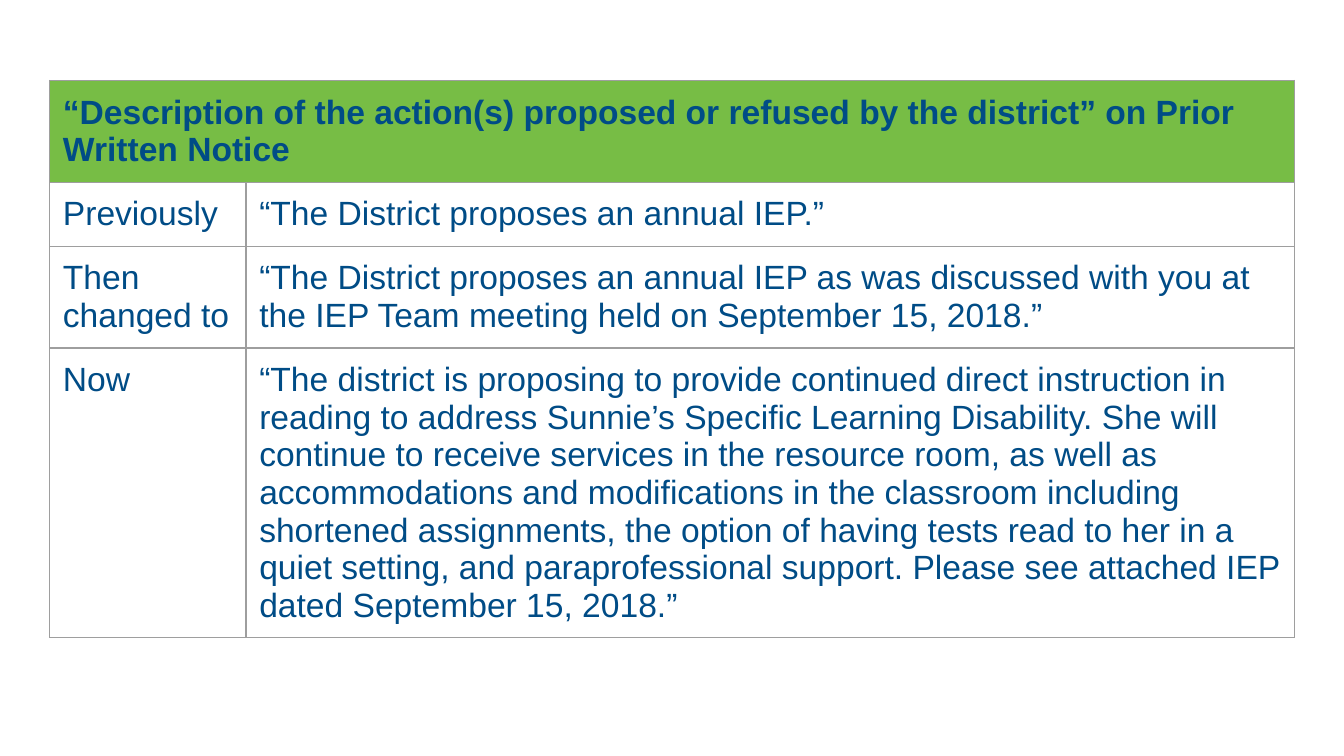
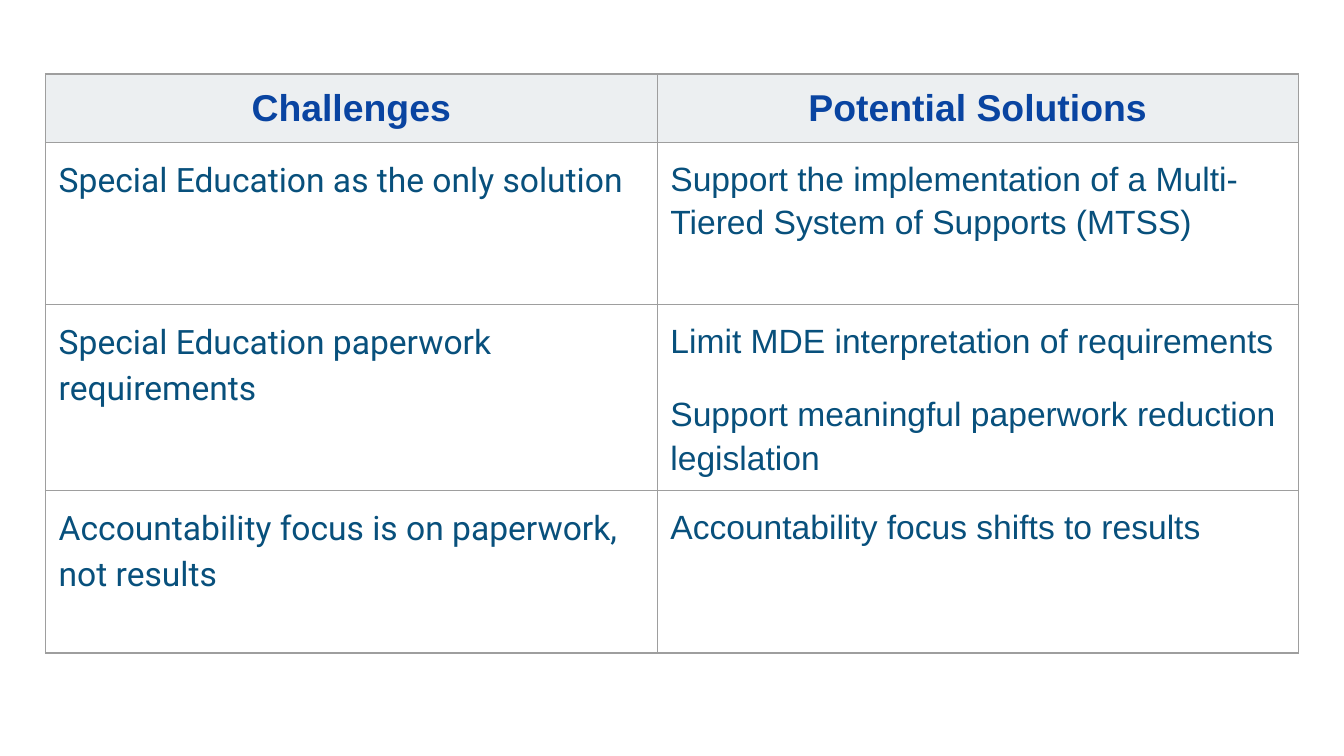
"""Build two slides that each hold one bordered table."""
import dataclasses

import lxml.etree
import pptx
import pptx.dml.color
import pptx.enum.text
import pptx.oxml.ns
import pptx.presentation
import pptx.table
import pptx.util

Cm = pptx.util.Cm
Pt = pptx.util.Pt
qn = pptx.oxml.ns.qn

NAVY, BLUE, TEAL = "004C86", "0944A1", "08507C"
GREEN, PALE, GREY = "77BD45", "ECEFF1", "9E9E9E"
BORDER = Pt(0.75)
INSET = Cm(0.25)


@dataclasses.dataclass(frozen=True)
class TextStyle:
    """Look of the text in a cell."""
    color: str
    size: float = 18
    font: str = "Arial"
    bold: bool = False
    centred: bool = False
    line_spacing: float | None = None
    gap: float | None = None


@dataclasses.dataclass(frozen=True)
class CellData:
    """Paragraphs of one cell with their style and fill."""
    paragraphs: tuple[str, ...]
    style: TextStyle
    fill: str | None = None


@dataclasses.dataclass(frozen=True)
class TableData:
    """Place, grid and cells of one table, in centimetres."""
    left: float
    top: float
    widths: tuple[float, ...]
    heights: tuple[float, ...]
    rows: tuple[tuple[CellData, ...], ...]


NOTICE_HEAD = TextStyle(NAVY, bold=True)
NOTICE_BODY = TextStyle(NAVY)
COLUMN_HEAD = TextStyle(BLUE, size=20, bold=True, centred=True)
SOLUTION = TextStyle(TEAL, line_spacing=1.15, gap=16)
CHALLENGE = dataclasses.replace(SOLUTION, font="Roboto")


def notice_row(label: str, wording: str) -> tuple[CellData, ...]:
    """Return a row of the notice table."""
    return tuple(CellData((text,), NOTICE_BODY) for text in (label, wording))


def challenge_row(challenge: str, *solutions: str) -> tuple[CellData, ...]:
    """Return a row pairing a challenge with its solutions."""
    return CellData((challenge,), CHALLENGE), CellData(solutions, SOLUTION)


NOTICE = TableData(
    0.94, 1.52, (3.71, 19.81), (1.07, 1.09, 1.07, 1.07),
    (
        (CellData(("“Description of the action(s) proposed or refused by the "
                   "district” on Prior Written Notice",), NOTICE_HEAD, GREEN),),
        notice_row("Previously", "“The District proposes an annual IEP.”"),
        notice_row("Then changed to",
                   "“The District proposes an annual IEP as was discussed with "
                   "you at the IEP Team meeting held on September 15, 2018.”"),
        notice_row("Now",
                   "“The district is proposing to provide continued direct "
                   "instruction in reading to address Sunnie’s Specific Learning "
                   "Disability. She will continue to receive services in the "
                   "resource room, as well as accommodations and modifications "
                   "in the classroom including shortened assignments, the option "
                   "of having tests read to her in a quiet setting, and "
                   "paraprofessional support. Please see attached IEP dated "
                   "September 15, 2018.”"),
    ),
)

CHALLENGES = TableData(
    0.86, 1.4, (11.56, 12.12), (0.99, 3.07, 3.07, 3.07),
    (
        tuple(CellData((text,), COLUMN_HEAD, PALE)
              for text in ("Challenges", "Potential Solutions")),
        challenge_row("Special Education as the only solution",
                      "Support the implementation of a Multi-Tiered System of "
                      "Supports (MTSS)"),
        challenge_row("Special Education paperwork requirements",
                      "Limit MDE interpretation of requirements",
                      "Support meaningful paperwork reduction legislation"),
        challenge_row("Accountability focus is on paperwork, not results",
                      "Accountability focus shifts to results"),
    ),
)


def rgb(value: str) -> pptx.dml.color.RGBColor:
    """Turn a hex string into a colour."""
    return pptx.dml.color.RGBColor.from_string(value)


def add_borders(cell: pptx.table._Cell) -> None:
    """Draw a thin grey line on every side of a cell."""
    props = cell._tc.get_or_add_tcPr()
    for side in ("a:lnL", "a:lnR", "a:lnT", "a:lnB"):
        ln = lxml.etree.SubElement(props, qn(side), w=str(int(BORDER)))
        fill = lxml.etree.SubElement(ln, qn("a:solidFill"))
        lxml.etree.SubElement(fill, qn("a:srgbClr"), val=GREY)


def write_cell(cell: pptx.table._Cell, data: CellData) -> None:
    """Fill a cell and write its paragraphs."""
    if data.fill:
        cell.fill.solid()
        cell.fill.fore_color.rgb = rgb(data.fill)
    else:
        cell.fill.background()
    style, tf = data.style, cell.text_frame
    last = len(data.paragraphs) - 1
    for i, text in enumerate(data.paragraphs):
        p = tf.add_paragraph() if i else tf.paragraphs[0]
        if style.centred:
            p.alignment = pptx.enum.text.PP_ALIGN.CENTER
        if style.line_spacing:
            p.line_spacing = style.line_spacing
        if style.gap:
            p.space_before = Pt(style.gap if i else 0)
            p.space_after = Pt(style.gap if i == last else 0)
        r = p.add_run()
        r.text = text
        r.font.name, r.font.size = style.font, Pt(style.size)
        r.font.bold = style.bold
        r.font.color.rgb = rgb(style.color)


def add_table_slide(prs: pptx.presentation.Presentation, data: TableData) -> None:
    """Add a blank slide with one table; a short row spans the full width."""
    s = prs.slides.add_slide(prs.slide_layouts[6])
    table = s.shapes.add_table(
        len(data.heights), len(data.widths), Cm(data.left), Cm(data.top),
        Cm(sum(data.widths)), Cm(sum(data.heights))).table
    table.first_row = table.horz_banding = False
    for column, width in zip(table.columns, data.widths):
        column.width = Cm(width)
    for row, height in zip(table.rows, data.heights):
        row.height = Cm(height)
    for cell in table.iter_cells():
        cell.margin_left = cell.margin_right = INSET
        cell.margin_top = cell.margin_bottom = INSET
        add_borders(cell)
    for i, row_data in enumerate(data.rows):
        if len(row_data) < len(data.widths):
            table.cell(i, 0).merge(table.cell(i, len(data.widths) - 1))
        for j, cell_data in enumerate(row_data):
            write_cell(table.cell(i, j), cell_data)


def main() -> None:
    """Build and save the presentation."""
    prs = pptx.Presentation()
    prs.slide_width, prs.slide_height = Cm(25.4), Cm(14.29)
    for data in (NOTICE, CHALLENGES):
        add_table_slide(prs, data)
    prs.save("out.pptx")


if __name__ == "__main__":
    main()
